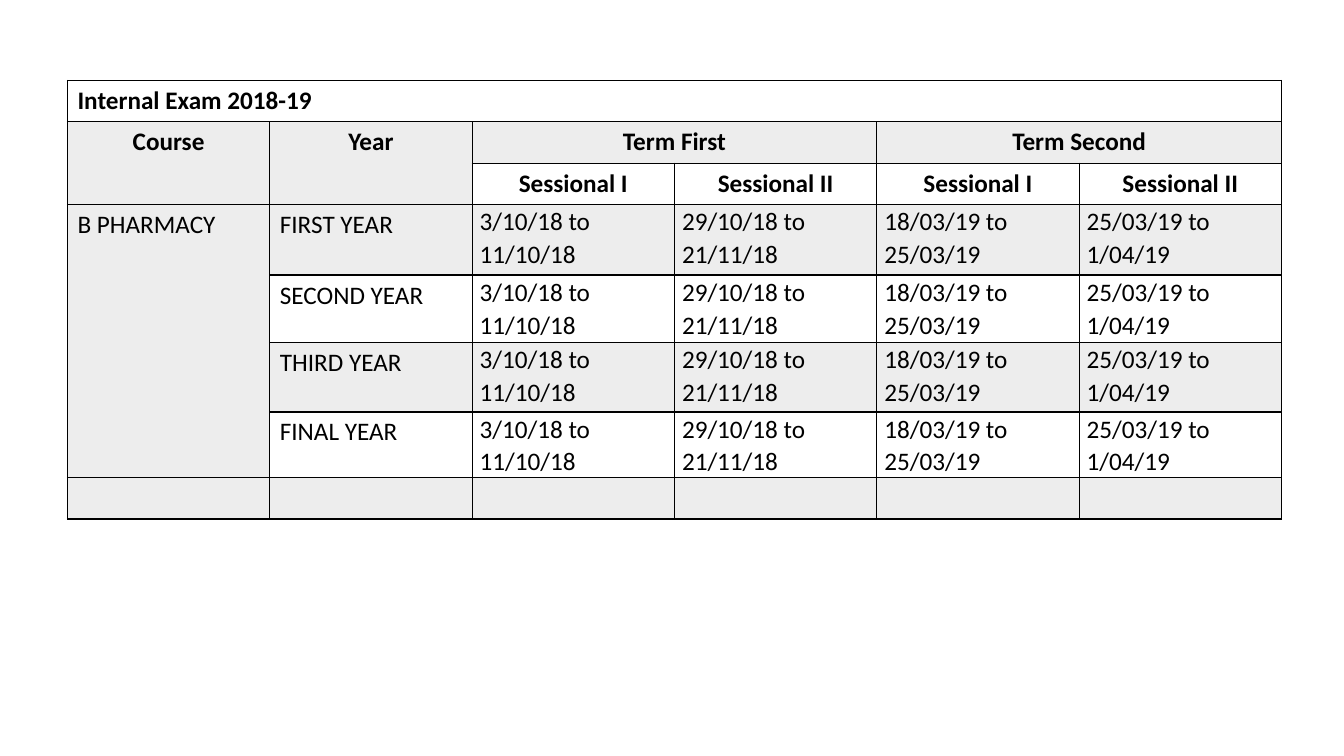
from lxml.etree import SubElement
from pptx import Presentation
from pptx.dml.color import RGBColor
from pptx.enum.text import PP_ALIGN
from pptx.oxml.ns import qn
from pptx.util import Cm, Pt

COLORS = {"text": "000000", "border": "000000", "band": "A5A5A5"}
BAND_OPACITY = 20
COLUMN_WIDTH = 5.1
ROW_HEIGHTS = [1.04, 1.04, 1.04, 1.78, 1.7, 1.75, 1.63, 1.04]
YEARS = ["FIRST YEAR", "SECOND YEAR", "THIRD YEAR", "FINAL YEAR"]
SESSION_DATES = [
    "3/10/18 to 11/10/18",
    "29/10/18 to 21/11/18",
    "18/03/19 to 25/03/19",
    "25/03/19 to 1/04/19",
]
MERGES = [(0, 0, 0, 5), (1, 0, 2, 0), (1, 1, 2, 1), (1, 2, 1, 3), (1, 4, 1, 5), (3, 0, 6, 0)]

HEADING = {"font": {"bold": True}}
CENTRED = {"font": {"bold": True}, "para": {"alignment": PP_ALIGN.CENTER}}
LABEL = {"font": {"bold": False}}
DATES = {
    "font": {"bold": False},
    "para": {"line_spacing": 1.07, "space_after": Pt(8)},
    "cell": {
        "margin_left": Cm(0.19),
        "margin_right": Cm(0.19),
        "margin_top": Cm(0),
        "margin_bottom": Cm(0),
    },
}


def apply_format(target, values):
    for name, value in values.items():
        setattr(target, name, value)


def draw_borders(cell):
    properties = cell._tc.get_or_add_tcPr()
    for side in ("a:lnL", "a:lnR", "a:lnT", "a:lnB"):
        line = SubElement(properties, qn(side), w=str(Pt(1)))
        fill = SubElement(line, qn("a:solidFill"))
        SubElement(fill, qn("a:srgbClr"), val=COLORS["border"])


def fill_band(cell):
    cell.fill.solid()
    cell.fill.fore_color.rgb = RGBColor.from_string(COLORS["band"])
    color = cell._tc.tcPr.find(qn("a:solidFill")).find(qn("a:srgbClr"))
    SubElement(color, qn("a:alpha"), val=str(BAND_OPACITY * 1000))


def style_cell(cell, shaded):
    draw_borders(cell)
    if shaded:
        fill_band(cell)
    else:
        cell.fill.background()


def write_cell(cell, text, style):
    apply_format(cell, style.get("cell", {}))
    para = cell.text_frame.paragraphs[0]
    apply_format(para, style.get("para", {}))
    span = para.add_run()
    span.text = text
    apply_format(span.font, {"name": "Calibri", "size": Pt(18), **style["font"]})
    span.font.color.rgb = RGBColor.from_string(COLORS["text"])


def add_grid(page):
    frame = page.shapes.add_table(
        len(ROW_HEIGHTS), 6, Cm(1.7), Cm(2.03), Cm(6 * COLUMN_WIDTH), Cm(sum(ROW_HEIGHTS))
    )
    table = frame.table
    apply_format(table, {"first_row": False, "horz_banding": False})
    for column in table.columns:
        column.width = Cm(COLUMN_WIDTH)
    for index, (row, height) in enumerate(zip(table.rows, ROW_HEIGHTS)):
        row.height = Cm(height)
        for cell in row.cells:
            style_cell(cell, shaded=index % 2 == 1)
    for top, left, bottom, right in MERGES:
        table.cell(top, left).merge(table.cell(bottom, right))
    return table


def write_headings(table):
    write_cell(table.cell(0, 0), "Internal Exam 2018-19", HEADING)
    for column, text in {0: "Course", 1: "Year", 2: "Term First", 4: "Term Second"}.items():
        write_cell(table.cell(1, column), text, CENTRED)
    for column, text in enumerate(["Sessional I", "Sessional II"] * 2, 2):
        write_cell(table.cell(2, column), text, CENTRED)


def write_schedule(table):
    write_cell(table.cell(3, 0), "B PHARMACY", LABEL)
    for row, year in enumerate(YEARS, 3):
        write_cell(table.cell(row, 1), year, LABEL)
        for column, dates in enumerate(SESSION_DATES, 2):
            write_cell(table.cell(row, column), dates, DATES)


def main():
    deck = Presentation()
    apply_format(deck, {"slide_width": Cm(33.87), "slide_height": Cm(19.05)})
    page = deck.slides.add_slide(deck.slide_layouts[6])
    table = add_grid(page)
    write_headings(table)
    write_schedule(table)
    deck.save("out.pptx")


if __name__ == "__main__":
    main()
